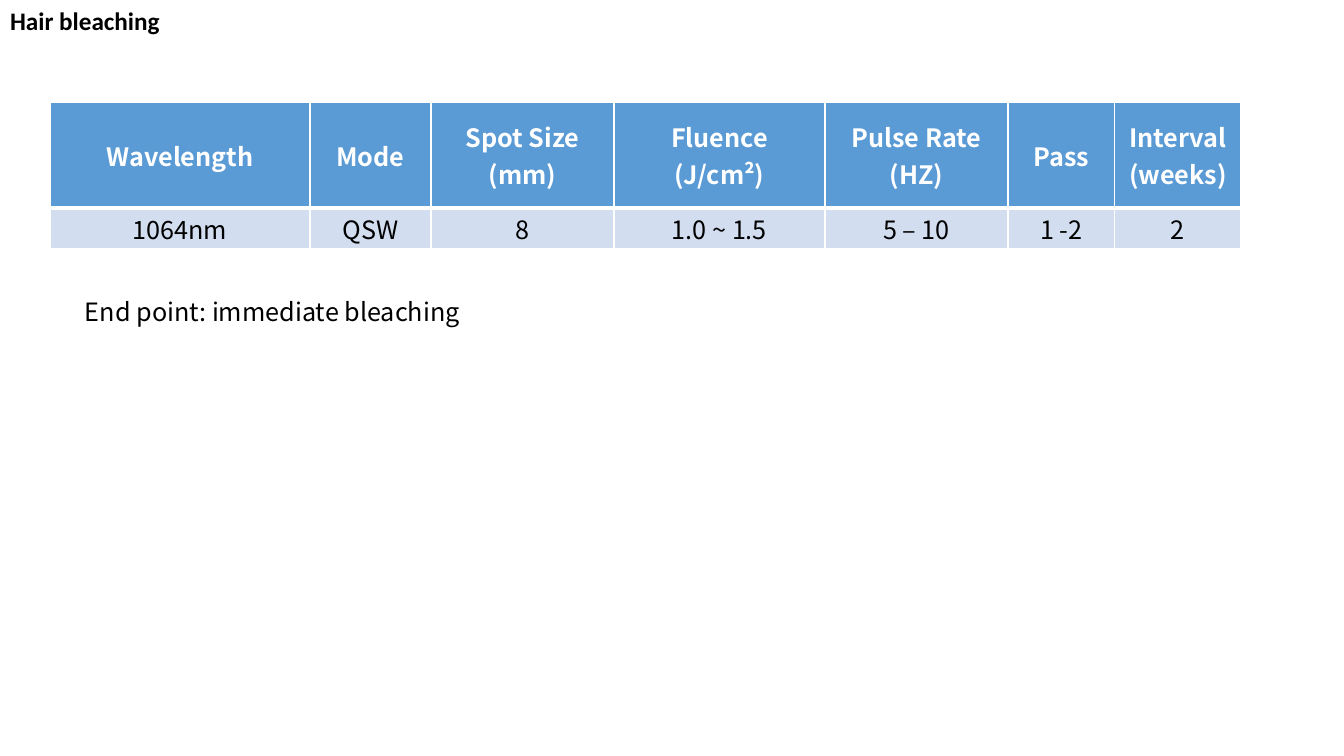
from lxml import etree
from pptx import Presentation
from pptx import util as u
from pptx.dml.color import RGBColor
from pptx.enum import text
from pptx.oxml import ns

PX = 914400 / 100.8
BLACK, WHITE = "000000", "FFFFFF"
HEADER_FILL, BODY_FILL = "5B9BD5", "D2DEEF"

COLUMN_WIDTHS = [260, 121, 183, 211, 183, 107, 126]
ROW_HEIGHTS = [106, 41]
LASER_SETTINGS = [
    ["Wavelength", "Mode", "Spot Size\n(mm)", "Fluence\n(J/cm²)",
     "Pulse Rate\n(HZ)", "Pass", "Interval\n(weeks)"],
    ["1064nm", "QSW", "8", "1.0 ~ 1.5", "5 – 10", "1 -2", "2"],
]


def px(length):
    return u.Emu(round(length * PX))


def color(hex_string):
    return RGBColor.from_string(hex_string)


class SlideBuilder:
    body_font = "Noto Sans CJK KR"
    title_font = "Calibri"
    size = u.Pt(18)

    def __init__(self, prs):
        self.slide = prs.slides.add_slide(prs.slide_layouts[5])

    def set_text(self, frame, content, font, ink=BLACK, bold=False,
                 align=text.PP_ALIGN.LEFT):
        frame.text = content
        for paragraph in frame.paragraphs:
            paragraph.alignment = align
            paragraph.font.name = font
            paragraph.font.size = self.size
            paragraph.font.bold = bold
            paragraph.font.color.rgb = color(ink)

    def place(self, shape, box):
        shape.left, shape.top, shape.width, shape.height = map(px, box)
        frame = shape.text_frame
        frame.word_wrap = True
        frame.auto_size = text.MSO_AUTO_SIZE.NONE
        frame.vertical_anchor = text.MSO_ANCHOR.TOP
        return frame

    def title(self, content, box):
        frame = self.place(self.slide.shapes.title, box)
        self.set_text(frame, content, self.title_font, bold=True)

    def label(self, content, box):
        shape = self.slide.shapes.add_textbox(*map(px, box))
        self.set_text(self.place(shape, box), content, self.body_font)

    def border(self, cell, bottom):
        """Draw white cell edges, 1 pt except for the bottom one."""
        properties = cell._tc.get_or_add_tcPr()
        for side, points in (("L", 1), ("R", 1), ("T", 1), ("B", bottom)):
            edge = etree.SubElement(properties, ns.qn(f"a:ln{side}"),
                                    w=str(u.Pt(points)))
            fill = etree.SubElement(edge, ns.qn("a:solidFill"))
            etree.SubElement(fill, ns.qn("a:srgbClr"), val=WHITE)

    def table(self, rows, left, top, widths, heights):
        box = (left, top, sum(widths), sum(heights))
        grid = self.slide.shapes.add_table(
            len(rows), len(widths), *map(px, box)).table
        for column, width in zip(grid.columns, widths):
            column.width = px(width)
        for r, (values, height) in enumerate(zip(rows, heights)):
            grid.rows[r].height = px(height)
            header = r == 0
            for c, value in enumerate(values):
                cell = grid.cell(r, c)
                self.border(cell, bottom=3 if header else 1)
                cell.fill.solid()
                cell.fill.fore_color.rgb = color(
                    HEADER_FILL if header else BODY_FILL)
                cell.margin_top = cell.margin_bottom = 0
                cell.vertical_anchor = text.MSO_ANCHOR.MIDDLE
                self.set_text(cell.text_frame, value, self.body_font,
                              WHITE if header else BLACK, header,
                              text.PP_ALIGN.CENTER)


def main():
    prs = Presentation()
    prs.slide_width, prs.slide_height = px(1344), px(756)
    builder = SlideBuilder(prs)
    builder.title("Hair bleaching", (0, 0, 352, 40))
    builder.table(LASER_SETTINGS, 50, 102, COLUMN_WIDTHS, ROW_HEIGHTS)
    builder.label("End point: immediate bleaching", (75, 291, 1167, 40))
    prs.save("out.pptx")


if __name__ == "__main__":
    main()
